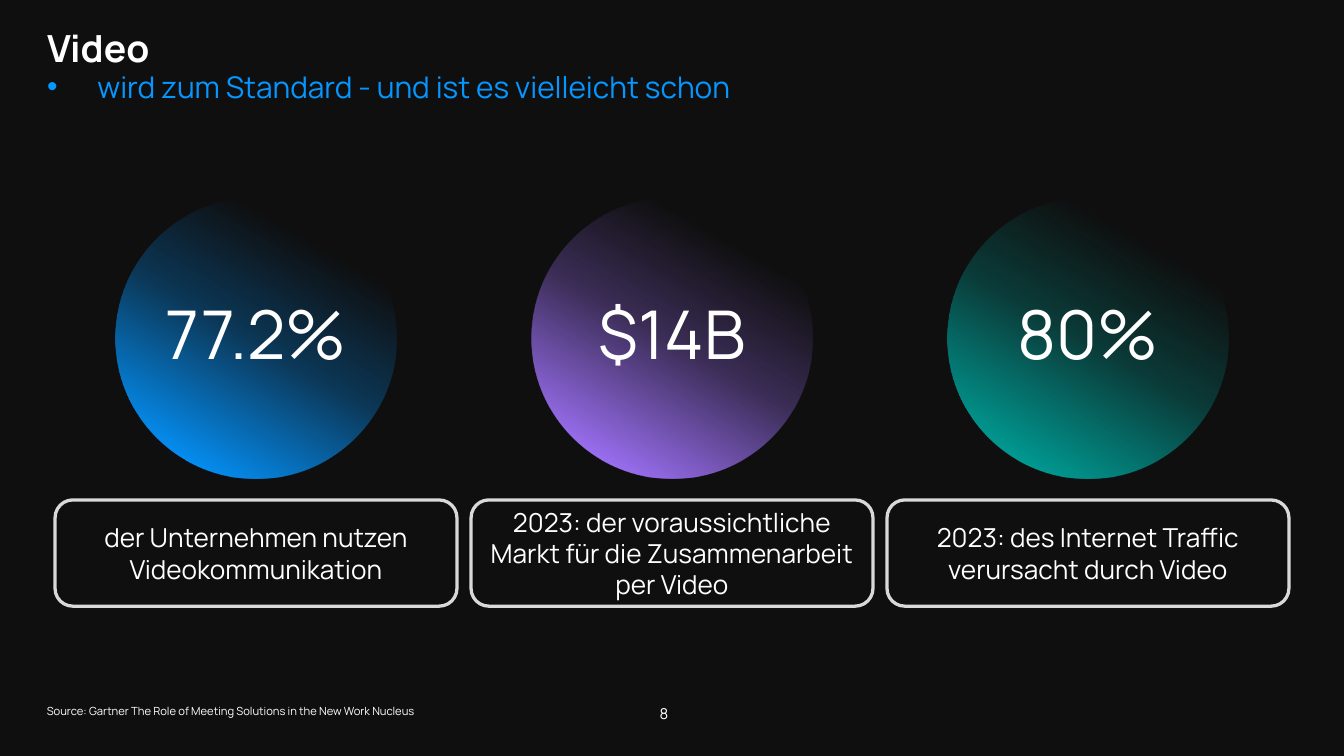
from pptx import Presentation
from pptx.dml.color import RGBColor
from pptx.enum.shapes import MSO_SHAPE as Shape
from pptx.enum.text import MSO_ANCHOR as Anchor, MSO_AUTO_SIZE as AutoSize, PP_ALIGN as Align
from pptx.oxml import parse_xml
from pptx.oxml.ns import nsdecls, qn
from pptx.util import Emu, Pt

FONT = "Manrope"
WHITE = "FFFFFF"
SKY = "0596FF"
CARDS = [
    ("77.2%", "der Unternehmen nutzen Videokommunikation", SKY),
    ("$14B", "2023: der voraussichtliche Markt für die Zusammenarbeit per Video", "A375FF"),
    ("80%", "2023: des Internet Traffic verursacht durch Video", "00A39B"),
]


def px(length):
    return Emu(length * 4572)


def color(value):
    return RGBColor.from_string(value)


def place(shape, left, top, width, height):
    shape.left, shape.top = px(left), px(top)
    shape.width, shape.height = px(width), px(height)


def write(shape, text, size, tone=WHITE, align=Align.LEFT, anchor=Anchor.TOP, bold=False, wrap=True):
    frame = shape.text_frame
    frame.text = text
    frame.word_wrap = wrap
    frame.auto_size = AutoSize.NONE
    frame.vertical_anchor = anchor
    para = frame.paragraphs[0]
    para.alignment = align
    para.space_before = Pt(0)
    para.font.name = FONT
    para.font.size = Pt(size)
    para.font.bold = bold
    para.font.color.rgb = color(tone)
    return para


def fade(shape, tone):
    stops = "".join(
        f'<a:gs pos="{position * 1000}"><a:srgbClr val="{tone}">'
        f'<a:alpha val="{alpha * 1000}"/></a:srgbClr></a:gs>'
        for position, alpha in ((10, 100), (49, 30), (79, 0))
    )
    shape.fill.gradient()
    gradient = shape.element.spPr.find(qn("a:gradFill"))
    gradient.replace(
        gradient.find(qn("a:gsLst")),
        parse_xml(f'<a:gsLst {nsdecls("a")}>{stops}</a:gsLst>'),
    )
    shape.fill.gradient_angle = 60


def add_heading(page, left, top, width, height):
    title = page.shapes.title
    place(title, left, top, width, height)
    write(title, "Video", 20, bold=True)
    body = page.placeholders[1]
    place(body, left, top + 64, width, height - 64)
    body.text_frame.text = ""
    props = body.text_frame.paragraphs[0]._p.get_or_add_pPr()
    props.set("marL", "0")
    props.set("indent", "0")
    props.append(parse_xml(f'<a:buNone {nsdecls("a")}/>'))
    para = write(body, "wird zum Standard - und ist es vielleicht schon", 16, SKY)
    para.space_after = Pt(4)


def add_card(page, left, top, width, height, figure, caption, tone):
    group = page.shapes.add_group_shape()
    diameter = 418
    circle = group.shapes.add_shape(
        Shape.OVAL, px(left + (width - diameter) // 2), px(top), px(diameter), px(diameter)
    )
    circle.shadow.inherit = False
    fade(circle, tone)
    circle.line.fill.background()
    write(circle, figure, 36, align=Align.CENTER, anchor=Anchor.MIDDLE).line_spacing = 0.9
    frame = circle.text_frame
    frame.margin_left = frame.margin_right = frame.margin_top = frame.margin_bottom = 0

    label_height = 158
    label = group.shapes.add_shape(
        Shape.ROUNDED_RECTANGLE, px(left), px(top + height - label_height), px(width), px(label_height)
    )
    label.shadow.inherit = False
    label.fill.background()
    label.line.color.rgb = color("D9D9D9")
    label.line.width = Pt(1.75)
    write(label, caption, 14, align=Align.CENTER, anchor=Anchor.MIDDLE)


def add_cards(page, left, top, width, height):
    card_width = 598
    pitch = (width - card_width) // (len(CARDS) - 1)
    for index, card in enumerate(CARDS):
        add_card(page, left + index * pitch, top, card_width, height, *card)


def add_footer(page, left, top, width, height):
    number = page.shapes.add_textbox(px(left + 890), px(top), px(96), px(height))
    write(number, "8", 8, align=Align.CENTER, anchor=Anchor.MIDDLE)
    source = page.shapes.add_textbox(px(left), px(top), px(width), px(40))
    write(source, "Source: Gartner The Role of Meeting Solutions in the New Work Nucleus", 6, wrap=False)


def main():
    deck = Presentation()
    deck.slide_width, deck.slide_height = px(2000), px(1125)
    page = deck.slides.add_slide(deck.slide_layouts[1])
    page.background.fill.solid()
    page.background.fill.fore_color.rgb = color("0F0F0F")
    add_heading(page, 50, 28, 1876, 160)
    add_cards(page, 82, 294, 1836, 608)
    add_footer(page, 50, 1038, 594, 48)
    deck.save("out.pptx")


if __name__ == "__main__":
    main()
